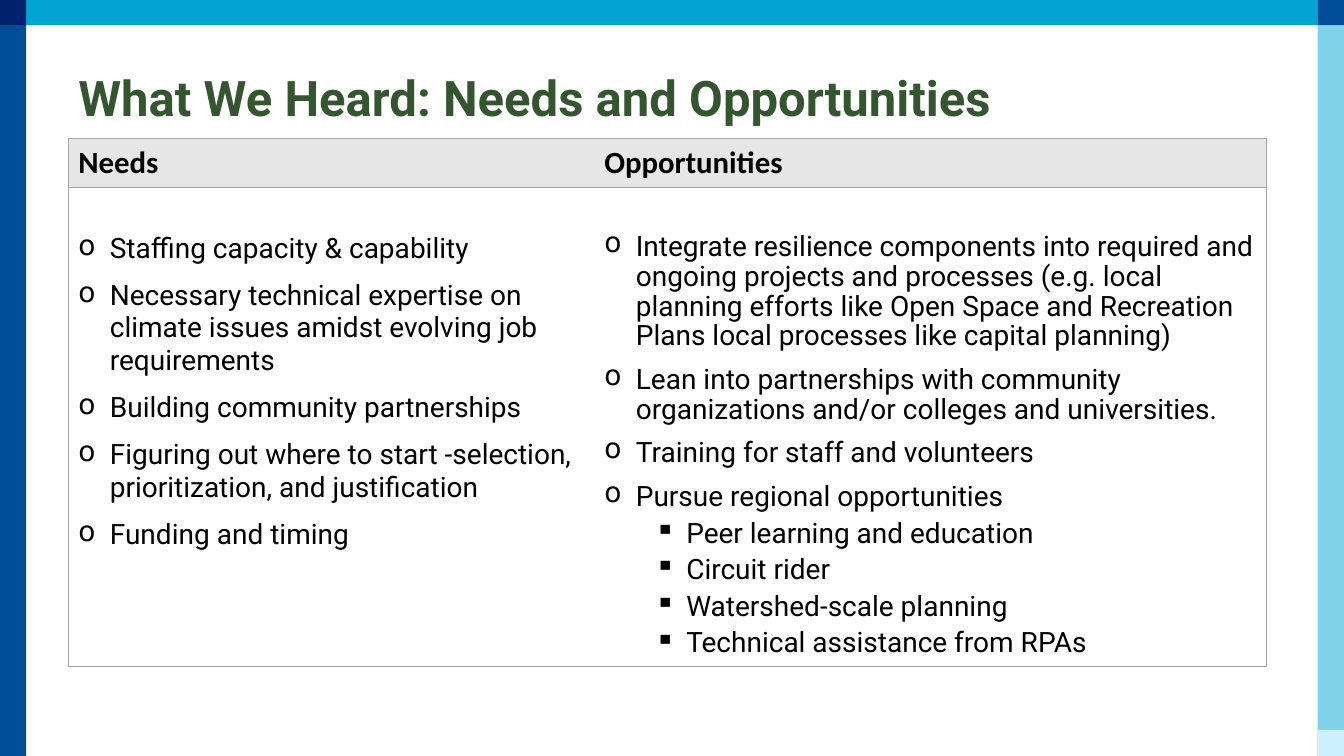
from dataclasses import dataclass
from lxml.etree import SubElement
from pptx import Presentation
from pptx.dml.color import RGBColor as Rgb
from pptx.enum.shapes import MSO_SHAPE as Shape
from pptx.enum.text import MSO_ANCHOR as Anchor, MSO_AUTO_SIZE as Fit, PP_ALIGN as Align
from pptx.oxml import parse_xml as to_xml
from pptx.oxml.ns import nsdecls, qn
from pptx.util import Pt

SCALE = 9525
WIDE, HIGH = 1280, 720
BAR, EDGE = 24, 25
PLAIN = "{2D5ABB26-0587-4C30-8999-92F81FD0307C}"


@dataclass(frozen=True)
class Theme:
    sky: str = "01A5D4"
    blue: str = "004E95"
    navy: str = "00216D"
    pale: str = "7FD1EC"
    ice: str = "CEF0FE"
    green: str = "345530"
    ink: str = "000000"
    head: str = "E7E6E6"
    rule: str = "A5A5A5"
    sans: str = "Roboto"
    label: str = "Calibri"
    big: int = 35
    mid: int = 22
    text: int = 20


LOOK = Theme()
TITLE = dict(name=LOOK.sans, size=Pt(LOOK.big), bold=True)
HEAD = dict(name=LOOK.label, size=Pt(LOOK.mid), bold=True)
BODY = dict(name=LOOK.sans, size=Pt(LOOK.text), bold=False)

NEEDS = [
    (0, "Staffing capacity & capability"),
    (0, "Necessary technical expertise on climate issues amidst evolving job requirements"),
    (0, "Building community partnerships"),
    (0, "Figuring out where to start -selection, prioritization, and justification"),
    (0, "Funding and timing"),
]
CHANCES = [
    (0, "Integrate resilience components into required and ongoing projects and processes "
        "(e.g. local planning efforts like Open Space and Recreation Plans local processes "
        "like capital planning)"),
    (0, "Lean into partnerships with community organizations and/or colleges and universities."),
    (0, "Training for staff and volunteers"),
    (0, "Pursue regional opportunities"),
    (1, "Peer learning and education"),
    (1, "Circuit rider"),
    (1, "Watershed-scale planning"),
    (1, "Technical assistance from RPAs"),
]


def px(size):
    return size * SCALE


def assign(item, values):
    for name, value in values.items():
        setattr(item, name, value)


def write(par, text, form, color):
    run = par.add_run()
    run.text = text
    assign(run.font, form)
    run.font.color.rgb = Rgb.from_string(color)


def add_bar(slide, left, top, width, height, color):
    bar = slide.shapes.add_shape(Shape.RECTANGLE, *map(px, (left, top, width, height)))
    bar.shadow.inherit = False
    bar.fill.solid()
    bar.fill.fore_color.rgb = Rgb.from_string(color)
    bar.line.fill.background()


def add_frame(slide):
    right, low = WIDE - EDGE, HIGH - EDGE
    for bar in (
        (0, 0, WIDE, BAR, LOOK.sky),
        (0, BAR, EDGE, HIGH - BAR, LOOK.blue),
        (0, 0, EDGE, BAR, LOOK.navy),
        (right, 0, EDGE, HIGH, LOOK.pale),
        (right, 0, EDGE, BAR, LOOK.blue),
        (right, low, EDGE, EDGE, LOOK.ice),
    ):
        add_bar(slide, *bar)


def set_title(slide, text):
    title = slide.shapes.title
    assign(title, dict(left=px(65), top=px(35), width=px(1161), height=px(121)))
    frame = title.text_frame
    assign(frame, dict(word_wrap=True, auto_size=Fit.NONE, vertical_anchor=Anchor.MIDDLE))
    par = frame.paragraphs[0]
    assign(par, dict(alignment=Align.LEFT, line_spacing=0.9))
    write(par, text, TITLE, LOOK.green)


def set_edges(cell, sides):
    props = cell._tc.get_or_add_tcPr()
    for spot, side in enumerate(sides):
        props.insert(spot, to_xml(
            f'<a:ln{side} {nsdecls("a")} w="{Pt(0.5)}"><a:solidFill>'
            f'<a:srgbClr val="{LOOK.rule}"/></a:solidFill></a:ln{side}>'))


def add_mark(par, level):
    props = par._p.get_or_add_pPr()
    props.set("marL", str(px(30 + 48 * level)))
    props.set("indent", str(px(-30)))
    tint = SubElement(props, qn("a:buClr"))
    SubElement(tint, qn("a:srgbClr")).set("val", LOOK.ink)
    SubElement(props, qn("a:buChar")).set("char", "o▪"[level])


def fill_head(cell, text):
    cell.vertical_anchor = Anchor.BOTTOM
    cell.fill.solid()
    cell.fill.fore_color.rgb = Rgb.from_string(LOOK.head)
    write(cell.text_frame.paragraphs[0], text, HEAD, LOOK.ink)


def fill_list(cell, items, top, lead):
    cell.fill.background()
    cell.margin_top = px(top)
    frame = cell.text_frame
    for spot, (level, text) in enumerate(items):
        par = frame.add_paragraph() if spot else frame.paragraphs[0]
        add_mark(par, level)
        assign(par, dict(level=level, line_spacing=lead))
        if spot:
            par.space_before = Pt(5 if level else 10)
        write(par, text, BODY, LOOK.ink)


def add_grid(slide):
    cols, rows = (501, 640), (46, 457)
    frame = slide.shapes.add_table(2, 2, px(65), px(132), px(sum(cols)), px(sum(rows)))
    grid = frame.table
    assign(grid, dict(first_row=False, horz_banding=False))
    grid._tbl.tblPr.find(qn("a:tableStyleId")).text = PLAIN
    for col, width in zip(grid.columns, cols):
        col.width = px(width)
    for row, height in zip(grid.rows, rows):
        row.height = px(height)
    fill_head(grid.cell(0, 0), "Needs")
    fill_head(grid.cell(0, 1), "Opportunities")
    fill_list(grid.cell(1, 0), NEEDS, 43, 1.0)
    fill_list(grid.cell(1, 1), CHANCES, 44, 0.9)
    for col, side in enumerate("LR"):
        for row in range(2):
            set_edges(grid.cell(row, col), side + "TB")


def main():
    deck = Presentation()
    assign(deck, dict(slide_width=px(WIDE), slide_height=px(HIGH)))
    slide = deck.slides.add_slide(deck.slide_layouts[5])
    add_frame(slide)
    add_grid(slide)
    set_title(slide, "What We Heard: Needs and Opportunities")
    deck.save("out.pptx")


if __name__ == "__main__":
    main()
